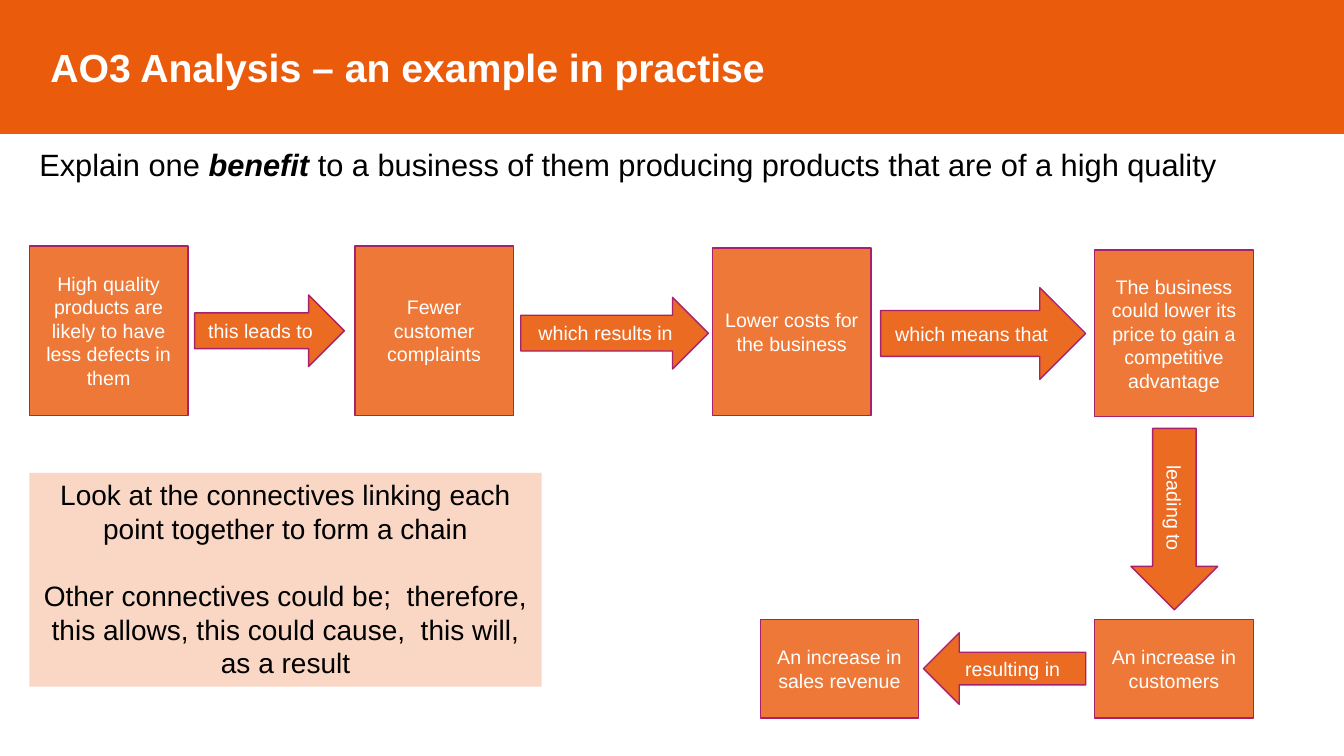
"""Builds a slide showing a chain of analysis linked by connectives."""
from lxml import etree
from pptx import Presentation
from pptx.dml.color import RGBColor
from pptx.enum.shapes import MSO_SHAPE
from pptx.enum.text import MSO_ANCHOR, PP_ALIGN
from pptx.oxml.ns import qn
from pptx.util import Pt

ORANGE = RGBColor(0xEA, 0x5B, 0x0C)
PLUM = RGBColor(0xA8, 0x21, 0x6B)
WHITE = RGBColor(0xFF, 0xFF, 0xFF)
BLACK = RGBColor(0, 0, 0)
RECT = MSO_SHAPE.RECTANGLE
RIGHT = MSO_SHAPE.RIGHT_ARROW
LEFT = MSO_SHAPE.LEFT_ARROW
MIDDLE, TOP = MSO_ANCHOR.MIDDLE, MSO_ANCHOR.TOP
CENTER, START = PP_ALIGN.CENTER, PP_ALIGN.LEFT
FONT = "Arial"


def add_run(paragraph, text, size, color, bold=False, italic=False):
    run = paragraph.add_run()
    run.text = text
    run.font.name = FONT
    run.font.size = Pt(size)
    run.font.color.rgb = color
    run.font.bold = bold
    run.font.italic = italic


def add_block(preset, place, opacity, border, paragraphs, size, color,
              align=CENTER, anchor=MIDDLE, bold=False):
    block = slide.shapes.add_shape(preset, *[Pt(length) for length in place])
    block.shadow.inherit = False
    block.fill.solid()
    block.fill.fore_color.rgb = ORANGE
    if opacity < 100:
        tint = block.fill._xPr.find(qn("a:solidFill"))[0]
        etree.SubElement(tint, qn("a:alpha")).set("val", str(opacity * 1000))
    if border is None:
        block.line.fill.background()
    else:
        block.line.color.rgb = border
        block.line.width = Pt(1)
    frame = block.text_frame
    frame.word_wrap = True
    frame.vertical_anchor = anchor
    for index, text in enumerate(paragraphs):
        paragraph = frame.add_paragraph() if index else frame.paragraphs[0]
        paragraph.alignment = align
        add_run(paragraph, text, size, color, bold)
    return block


deck = Presentation()
deck.slide_width, deck.slide_height = Pt(960), Pt(540)
slide = deck.slides.add_slide(deck.slide_layouts[6])

banner = add_block(RECT, (0, 0, 960, 95), 100, ORANGE,
                   ["AO3 Analysis – an example in practise"], 28, WHITE, START, bold=True)
banner.text_frame.margin_left = Pt(36)

question = slide.shapes.add_textbox(Pt(21), Pt(100.8), Pt(918), Pt(34)).text_frame
question.word_wrap = True
wording = question.paragraphs[0]
wording.space_after = Pt(12)
add_run(wording, "Explain one ", 22, BLACK)
add_run(wording, "benefit", 22, BLACK, bold=True, italic=True)
add_run(wording, " to a business of them producing products that are of a high quality", 22, BLACK)

STEP_WIDTH = 113.2
steps = [
    (21, 175.6, 121, "High quality products are likely to have less defects in them"),
    (253.5, 175.6, 121, "Fewer customer complaints"),
    (509, 177.2, 119.5, "Lower costs for the business"),
    (782, 178.7, 118.8, "The business could lower its price to gain a competitive advantage"),
    (782, 442.5, 70.5, "An increase in customers"),
    (543, 442.5, 70.5, "An increase in sales revenue"),
]
for left, top, height, point in steps:
    add_block(RECT, (left, top, STEP_WIDTH, height), 82, PLUM, [point], 14, WHITE)

connectives = [
    (RIGHT, (139, 210.7, 107, 51.2), 0, 0.5, "this leads to"),
    (RIGHT, (372, 212.4, 134, 51.2), 0, 0.5, "which results in"),
    (RIGHT, (629, 205.4, 146.5, 65.5), 0, 0.5, "which means that"),
    (RIGHT, (774, 339.8, 129.6, 62), 90, 0.5, "leading to"),
    (LEFT, (659.6, 452, 116, 51.2), 0, 0.455, "resulting in"),
]
for preset, place, turn, shaft, words in connectives:
    connective = add_block(preset, place, 90, PLUM, [words], 14, WHITE)
    connective.rotation = turn
    connective.adjustments[0] = shaft

advice = add_block(RECT, (21, 337.8, 366, 152.6), 24, None, [
    "Look at the connectives linking each point together to form a chain",
    "Other connectives could be;  therefore, this allows, this could cause,  this will, as a result",
], 20, BLACK, anchor=TOP)
advice.text_frame.paragraphs[1].space_before = Pt(24)

deck.save("out.pptx")
